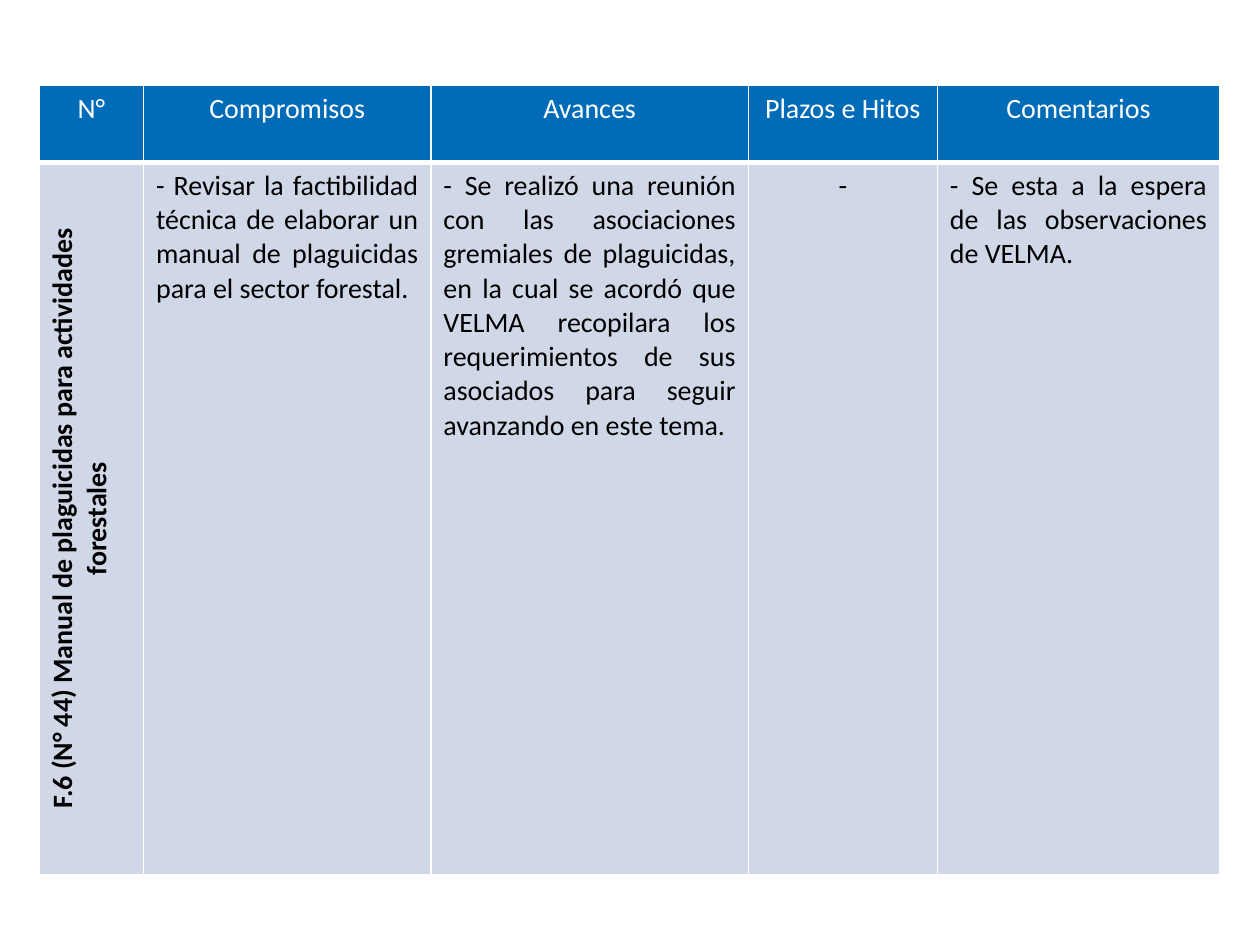
from lxml.etree import SubElement
from pptx import Presentation
from pptx.dml.color import RGBColor as Rgb
from pptx.enum.text import PP_ALIGN as Align
from pptx.oxml.ns import qn
from pptx.util import Inches, Pt

COLORS = {"header": "006CB7", "body": "D0D8E8", "white": "FFFFFF", "black": "000000"}
COLUMN_WIDTHS = [0.83, 2.28, 2.52, 1.5, 2.24]
ROW_HEIGHTS = [0.61, 4.65]
HEADINGS = ["N°", "Compromisos", "Avances", "Plazos e Hitos", "Comentarios"]
COMMITMENT = [
    ("F.6 (N° 44) Manual de plaguicidas para actividades forestales", Align.CENTER),
    ("- Revisar la factibilidad técnica de elaborar un manual de plaguicidas "
     "para el sector forestal.", Align.JUSTIFY),
    ("- Se realizó una reunión con las asociaciones gremiales de plaguicidas, "
     "en la cual se acordó que VELMA recopilara los requerimientos de sus "
     "asociados para seguir avanzando en este tema.", Align.JUSTIFY),
    ("-", Align.CENTER),
    ("- Se esta a la espera de las observaciones de VELMA.", Align.JUSTIFY),
]


def write_text(frame, text, *, color, align, bold=False, size=16, font="Calibri"):
    paragraph = frame.paragraphs[0]
    paragraph.alignment = align
    run = paragraph.add_run()
    run.text = text
    run.font.name = font
    run.font.size = Pt(size)
    run.font.bold = bold
    run.font.color.rgb = Rgb.from_string(COLORS[color])


class SlideBuilder:
    def __init__(self, slide, border="white"):
        self.slide = slide
        self.border = border

    def add_table(self, left, top, widths, heights):
        table = self.slide.shapes.add_table(
            len(heights), len(widths), Inches(left), Inches(top),
            Inches(sum(widths)), Inches(sum(heights))).table
        table.first_row = False
        table.horz_banding = False
        for column, width in zip(table.columns, widths):
            column.width = Inches(width)
        for row, height in zip(table.rows, heights):
            row.height = Inches(height)
        return table

    def fill_cell(self, cell, text, *, fill, bottom=1, vertical=False, **text_format):
        properties = cell._tc.get_or_add_tcPr()
        if vertical:
            properties.set("vert", "vert270")
        for side, width in zip("LRTB", (1, 1, 1, bottom)):
            line = SubElement(properties, qn(f"a:ln{side}"), w=str(Pt(width)))
            paint = SubElement(line, qn("a:solidFill"))
            SubElement(paint, qn("a:srgbClr"), val=COLORS[self.border])
        cell.fill.solid()
        cell.fill.fore_color.rgb = Rgb.from_string(COLORS[fill])
        write_text(cell.text_frame, text, **text_format)


def main():
    deck = Presentation()
    deck.slide_width, deck.slide_height = Inches(10), Inches(7.5)
    builder = SlideBuilder(deck.slides.add_slide(deck.slide_layouts[6]))
    progress = builder.add_table(0.31, 0.68, COLUMN_WIDTHS, ROW_HEIGHTS)
    for index, heading in enumerate(HEADINGS):
        builder.fill_cell(progress.cell(0, index), heading, fill="header",
                          bottom=3, color="white", align=Align.CENTER)
    for index, (detail, align) in enumerate(COMMITMENT):
        is_title = index == 0
        builder.fill_cell(progress.cell(1, index), detail, fill="body",
                          vertical=is_title, bold=is_title, color="black", align=align)
    deck.save("out.pptx")


if __name__ == "__main__":
    main()
